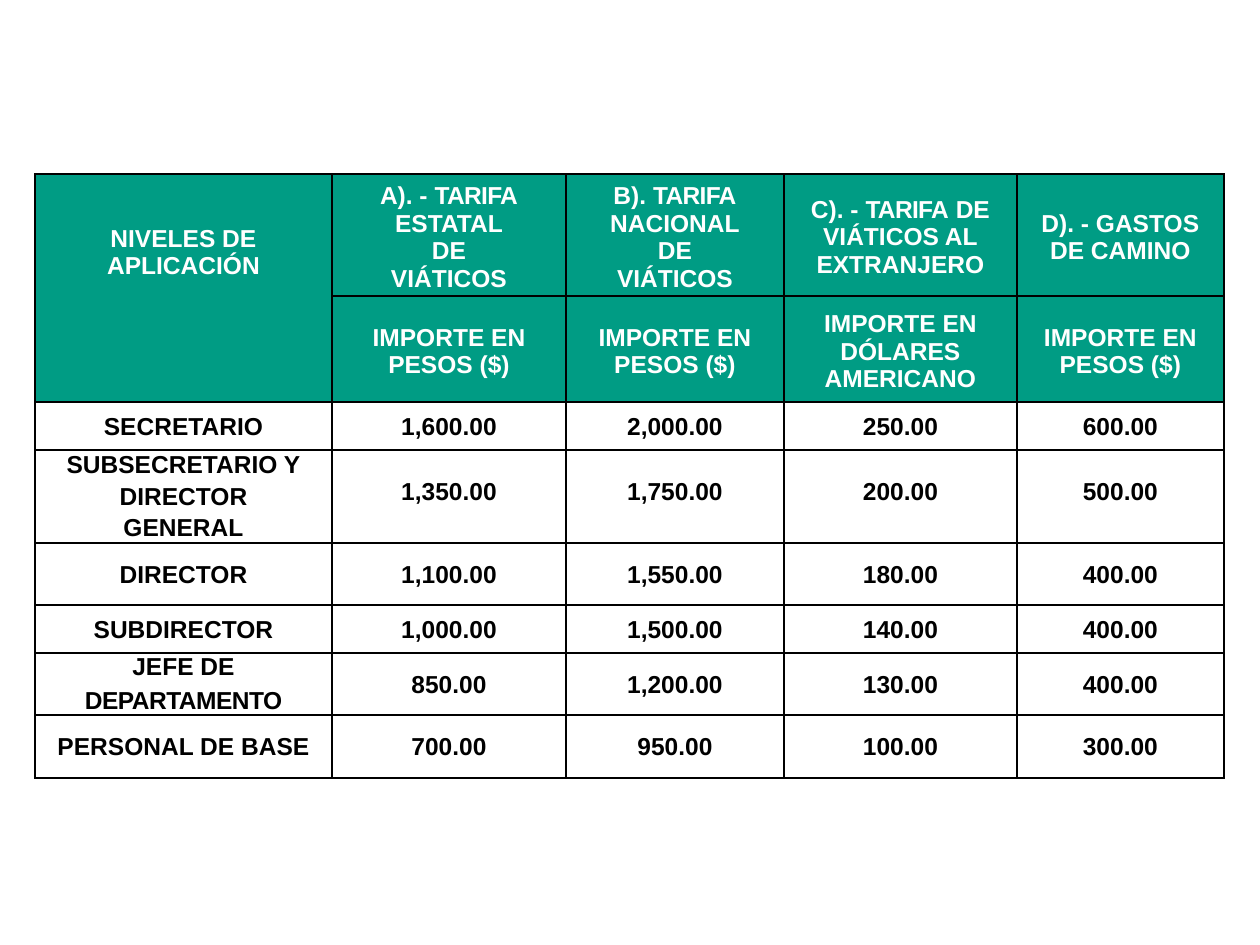
import pptx
import pptx.dml.color
import pptx.enum.text
import pptx.oxml
import pptx.oxml.ns
import pptx.util

SCALE = 914400 / 126
GREEN, WHITE, BLACK = "009C84", "FFFFFF", "000000"
TARIFA = ("TARIFA", -40)

COLUMN_WIDTHS = [297, 234, 218, 233, 207]
ROW_HEIGHTS = [122, 106, 48, 93, 62, 48, 62, 63]

TITLES = [
    [["A). - ", TARIFA], ["ESTATAL"], ["DE"], ["VIÁTICOS"]],
    [["B). ", TARIFA], ["NACIONAL"], ["DE"], ["VIÁTICOS"]],
    [["C). - ", TARIFA, " DE"], ["VIÁTICOS AL"], ["EXTRANJERO"]],
    [["D). - GASTOS"], ["DE CAMINO"]],
]
PESOS = [[["IMPORTE EN"]], [["PESOS ($)"]]]
DOLLARS = [[["IMPORTE EN"], ["DÓLARES"], ["AMERICANO"]]]
UNITS = [PESOS, PESOS, DOLLARS, PESOS]

LEVELS = [
    ([[["SECRETARIO"]]], ["1,600.00", "2,000.00", "250.00", "600.00"]),
    ([[["SUBSECRETARIO Y"]], [["DIRECTOR"], ["GENERAL"]]],
     ["1,350.00", "1,750.00", "200.00", "500.00"]),
    ([[["DIRECTOR"]]], ["1,100.00", "1,550.00", "180.00", "400.00"]),
    ([[["SUBDIRECTOR"]]], ["1,000.00", "1,500.00", "140.00", "400.00"]),
    ([[["JEFE DE"]], [[("DEPARTAMENTO", -30)]]],
     ["850.00", "1,200.00", "130.00", "400.00"]),
    ([[["PERSONAL DE BASE"]]], ["700.00", "950.00", "100.00", "300.00"]),
]


def px(length):
    return pptx.util.Emu(round(length * SCALE))


def rgb(value):
    return pptx.dml.color.RGBColor.from_string(value)


class SlideBuilder:
    font_name = "Arial"
    font_size = 14
    border_width = 1

    def __init__(self, page):
        self.page = page

    def table(self, left, top, widths, heights):
        frame = self.page.shapes.add_table(
            len(heights), len(widths), px(left), px(top),
            px(sum(widths)), px(sum(heights)))
        table = frame.table
        table.first_row = False
        table.horz_banding = False
        for column, width in zip(table.columns, widths):
            column.width = px(width)
        for row, height in zip(table.rows, heights):
            row.height = px(height)
        for cell in table.iter_cells():
            self.borders(cell)
            cell.fill.background()
        return table

    def borders(self, cell):
        properties = cell._tc.get_or_add_tcPr()
        for position, side in enumerate(("lnL", "lnR", "lnT", "lnB")):
            properties.insert(position, pptx.oxml.parse_xml(
                f'<a:{side} {pptx.oxml.ns.nsdecls("a")} '
                f'w="{pptx.util.Pt(self.border_width)}">'
                f'<a:solidFill><a:srgbClr val="{BLACK}"/></a:solidFill>'
                f'</a:{side}>'))

    def span(self, para, content, color):
        text, spacing = content if isinstance(content, tuple) else (content, 0)
        span = para.add_run()
        span.text = text
        span.font.name = self.font_name
        span.font.size = pptx.util.Pt(self.font_size)
        span.font.bold = True
        span.font.color.rgb = rgb(color)
        if spacing:
            span._r.get_or_add_rPr().set("spc", str(spacing))

    def cell(self, cell, paragraphs, color=BLACK, fill=None, top=0, bottom=0,
             anchor=pptx.enum.text.MSO_ANCHOR.MIDDLE):
        cell.margin_left = cell.margin_right = 0
        cell.margin_top, cell.margin_bottom = px(top), px(bottom)
        cell.vertical_anchor = anchor
        if fill:
            cell.fill.solid()
            cell.fill.fore_color.rgb = rgb(fill)
        paras = []
        for index, lines in enumerate(paragraphs):
            box = cell.text_frame
            para = box.add_paragraph() if index else box.paragraphs[0]
            para.alignment = pptx.enum.text.PP_ALIGN.CENTER
            for number, line in enumerate(lines):
                if number:
                    para.add_line_break()
                for content in line:
                    self.span(para, content, color)
            paras.append(para)
        return paras


def main():
    deck = pptx.Presentation()
    deck.slide_width, deck.slide_height = px(1260), px(945)
    builder = SlideBuilder(deck.slides.add_slide(deck.slide_layouts[6]))
    table = builder.table(35, 174, COLUMN_WIDTHS, ROW_HEIGHTS)

    header = {"color": WHITE, "fill": GREEN}
    table.cell(0, 0).merge(table.cell(1, 0))
    builder.cell(table.cell(0, 0), [[["NIVELES DE"], ["APLICACIÓN"]]], top=51,
                 anchor=pptx.enum.text.MSO_ANCHOR.TOP, **header)
    for column, (title, unit) in enumerate(zip(TITLES, UNITS), start=1):
        builder.cell(table.cell(0, column), [title], top=5, **header)
        builder.cell(table.cell(1, column), unit, top=5, **header)

    for row, (level, amounts) in enumerate(LEVELS, start=2):
        paras = builder.cell(table.cell(row, 0), level, top=2 if len(level) == 1 else 0)
        if level[0] == [["SUBSECRETARIO Y"]]:
            paras[1].line_spacing = 1.15
        elif level[0] == [["JEFE DE"]]:
            paras[1].line_spacing = pptx.util.Pt(16.6)
            paras[1].space_before = pptx.util.Pt(2.5)
        bottom = 9 if len(level[-1]) > 1 else 0
        for column, amount in enumerate(amounts, start=1):
            builder.cell(table.cell(row, column), [[[amount]]],
                         top=0 if bottom else 2, bottom=bottom)

    deck.save("out.pptx")


if __name__ == "__main__":
    main()
